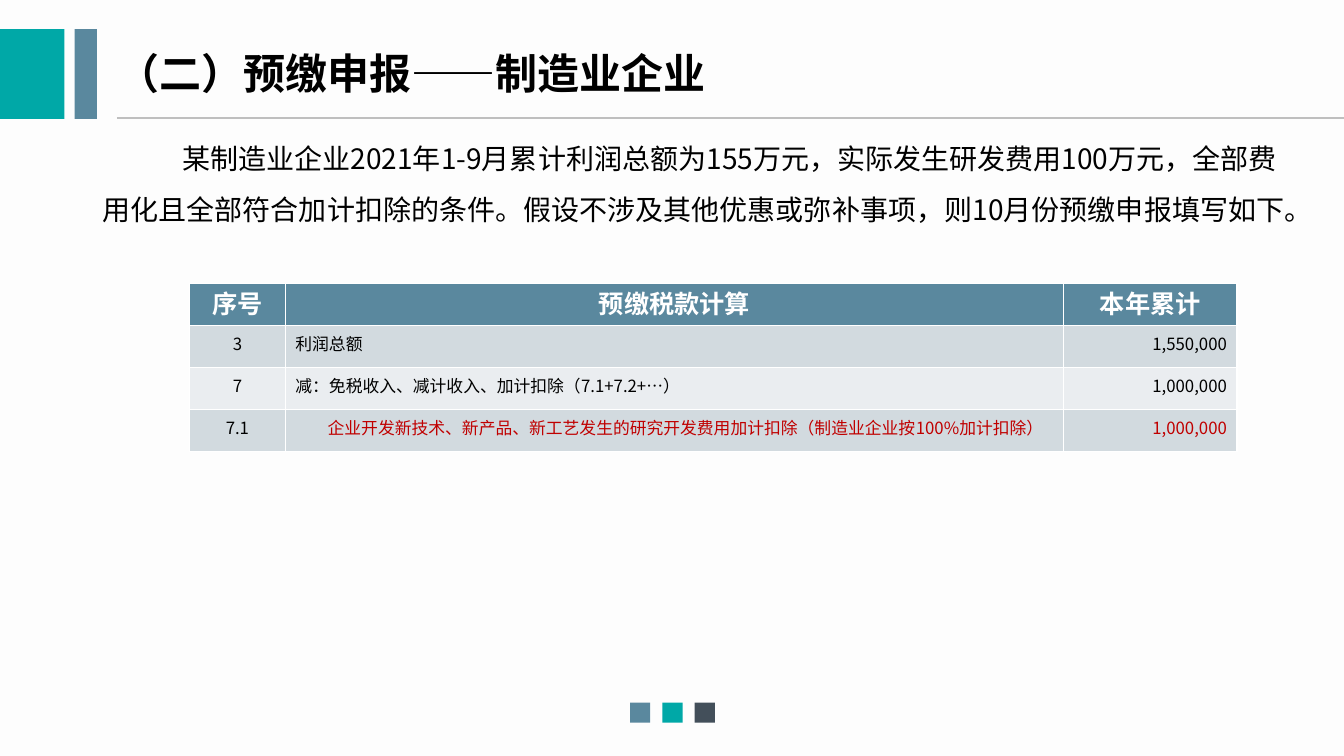
from dataclasses import dataclass

from lxml import etree
from pptx import Presentation, util as u
from pptx.dml.color import RGBColor
from pptx.enum import shapes, text
from pptx.oxml import ns

AL = text.PP_ALIGN


@dataclass(frozen=True)
class Theme:
    teal: str = "00A8A7"
    blue: str = "5A889E"
    slate: str = "434F5A"
    rule: str = "BFBFBF"
    page: str = "FDFDFD"
    ink: str = "000000"
    white: str = "FFFFFF"
    red: str = "C00000"
    bands: tuple[str, str] = ("D2DADF", "EAEDF0")
    font: str = "Noto Sans CJK SC"
    head_font: str = "Arial"
    title: float = 30
    body: float = 20
    head: float = 18
    cell: float = 12


@dataclass(frozen=True)
class Block:
    left: float
    top: float
    width: float
    height: float
    color: str


@dataclass(frozen=True)
class Entry:
    code: str
    label: str
    total: str
    color: str
    indent: float = 0


T = Theme()
BLOCKS = [
    Block(0, 0.29, 0.64, 0.89, T.teal),
    Block(0.74, 0.29, 0.22, 0.89, T.blue),
] + [
    Block(6.25 + 0.32 * i, 6.97, 0.2, 0.2, color)
    for i, color in enumerate((T.blue, T.teal, T.slate))
]
HEADS = ("序号", "预缴税款计算", "本年累计")
WIDTHS = (0.95, 7.72, 1.72)
ALIGNS = (AL.CENTER, AL.JUSTIFY, AL.RIGHT)
ENTRIES = [
    Entry("3", "利润总额", "1,550,000", T.ink),
    Entry("7", "减：免税收入、减计收入、加计扣除（7.1+7.2+…）", "1,000,000", T.ink),
    Entry("7.1", "企业开发新技术、新产品、新工艺发生的研究开发费用加计扣除（制造业企业按100%加计扣除）",
          "1,000,000", T.red, 0.32),
]


def style(para, size: float, color: str, bold: bool = False,
          align=AL.LEFT, face: str = T.font) -> None:
    para.alignment = align
    font = para.font
    font.size, font.bold, font.name = u.Pt(size), bold, face
    font.color.rgb = RGBColor.from_string(color)
    props = para._p.pPr.find(ns.qn("a:defRPr"))
    etree.SubElement(props, ns.qn("a:ea"), typeface=face)


def indent(para, width: float) -> None:
    para._p.get_or_add_pPr().set("indent", str(u.Inches(width)))


def paint(fill, color: str) -> None:
    fill.solid()
    fill.fore_color.rgb = RGBColor.from_string(color)


def add_block(slide, block: Block) -> None:
    box = slide.shapes.add_shape(
        shapes.MSO_SHAPE.RECTANGLE, u.Inches(block.left), u.Inches(block.top),
        u.Inches(block.width), u.Inches(block.height))
    box.shadow.inherit = False
    paint(box.fill, block.color)
    box.line.fill.background()


def add_rule(slide) -> None:
    line = slide.shapes.add_connector(
        shapes.MSO_CONNECTOR.STRAIGHT, u.Inches(1.16), u.Inches(1.17),
        u.Inches(13.33), u.Inches(1.17))
    line.line.color.rgb = RGBColor.from_string(T.rule)
    line.line.width = u.Pt(1.5)
    etree.SubElement(line._element.spPr, ns.qn("a:effectLst"))


def add_title(slide) -> None:
    title = slide.shapes.title
    title.left, title.top = u.Inches(1.07), u.Inches(0.42)
    title.width, title.height = u.Inches(12.01), u.Inches(0.6)
    frame = title.text_frame
    frame.text = "（二）预缴申报——制造业企业"
    frame.auto_size = text.MSO_AUTO_SIZE.NONE
    frame.vertical_anchor = text.MSO_ANCHOR.MIDDLE
    style(frame.paragraphs[0], T.title, T.ink, True)


def add_body(slide) -> None:
    box = slide.shapes.add_textbox(
        u.Inches(0.92), u.Inches(1.19), u.Inches(12.04), u.Inches(1.62))
    frame = box.text_frame
    frame.word_wrap = True
    frame.text = ("某制造业企业2021年1-9月累计利润总额为155万元，实际发生研发费用100万元，"
                  "全部费用化且全部符合加计扣除的条件。假设不涉及其他优惠或弥补事项，"
                  "则10月份预缴申报填写如下。")
    para = frame.paragraphs[0]
    para.line_spacing = 1.5
    indent(para, 0.79)
    style(para, T.body, T.ink)


def fill_cell(cell, words: str, fill: str):
    cell.text = words
    cell.vertical_anchor = text.MSO_ANCHOR.MIDDLE
    paint(cell.fill, fill)
    return cell.text_frame.paragraphs[0]


def add_grid(slide) -> None:
    grid = slide.shapes.add_table(
        len(ENTRIES) + 1, len(HEADS), u.Inches(1.88), u.Inches(2.81),
        u.Inches(sum(WIDTHS)), u.Inches(1.67)).table
    for col, (head, width) in enumerate(zip(HEADS, WIDTHS)):
        grid.columns[col].width = u.Inches(width)
        para = fill_cell(grid.cell(0, col), head, T.blue)
        style(para, T.head, T.white, True, AL.CENTER, T.head_font)
    for row, entry in enumerate(ENTRIES, 1):
        items = ((entry.code, T.ink), (entry.label, entry.color),
                 (entry.total, entry.color))
        for col, (words, color) in enumerate(items):
            cell = grid.cell(row, col)
            para = fill_cell(cell, words, T.bands[(row - 1) % 2])
            cell.margin_top = cell.margin_bottom = 0
            para.line_spacing = u.Pt(13)
            if col == 1 and entry.indent:
                indent(para, entry.indent)
            style(para, T.cell, color, False, ALIGNS[col])


def main() -> None:
    deck = Presentation()
    deck.slide_width, deck.slide_height = u.Inches(13.33), u.Inches(7.5)
    slide = deck.slides.add_slide(deck.slide_layouts.get_by_name("Title Only"))
    paint(slide.background.fill, T.page)
    for block in BLOCKS:
        add_block(slide, block)
    add_rule(slide)
    add_body(slide)
    add_title(slide)
    add_grid(slide)
    deck.save("out.pptx")


if __name__ == "__main__":
    main()
